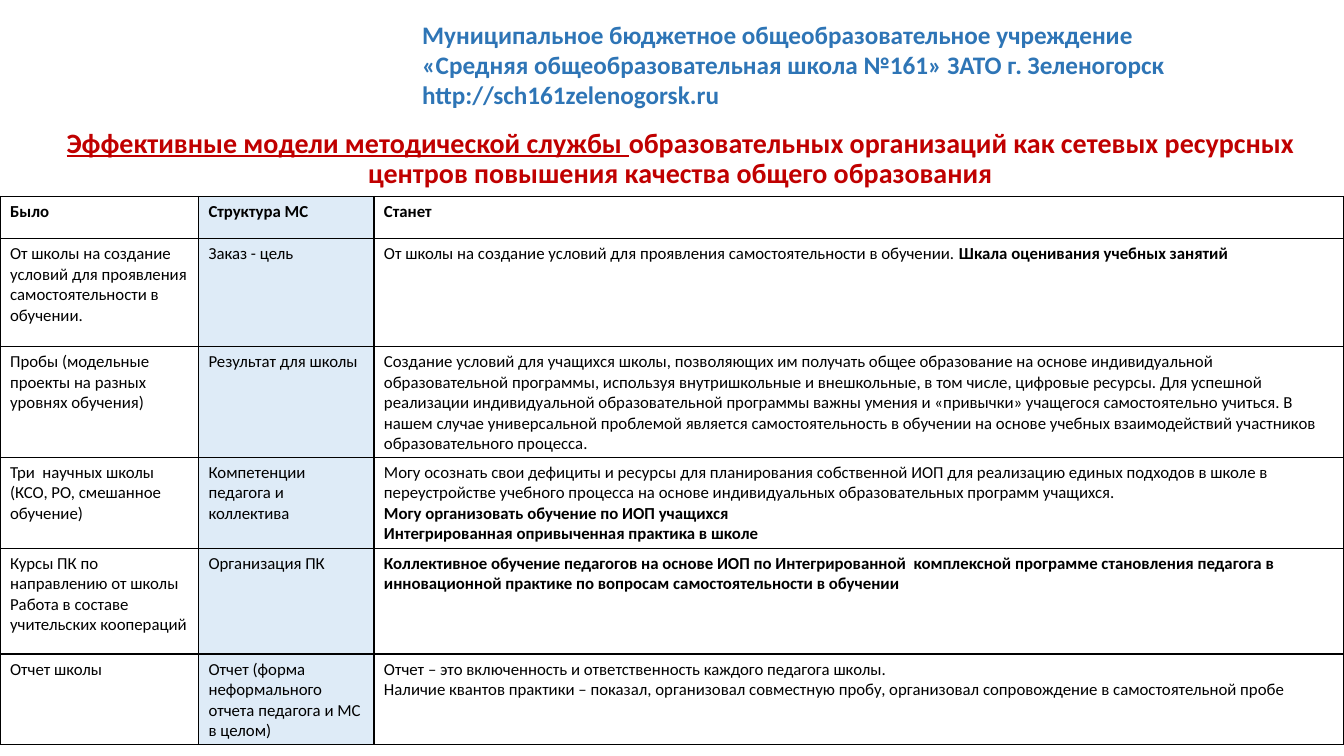
from dataclasses import dataclass

from lxml.etree import SubElement
from pptx import Presentation
from pptx.dml.color import RGBColor
from pptx.enum.text import MSO_ANCHOR, MSO_AUTO_SIZE, PP_ALIGN
from pptx.oxml.ns import qn
from pptx.util import Pt


@dataclass(frozen=True)
class Theme:
    face: str = "Calibri"
    blue: str = "2E75B6"
    red: str = "C00000"
    ink: str = "000000"
    pale: str = "DEEBF7"
    head: float = 18
    title: float = 20
    cell: float = 12
    edge: float = 1


@dataclass(frozen=True)
class Run:
    text: str
    bold: bool = False


Para = tuple[Run, ...]


@dataclass(frozen=True)
class Row:
    height: float
    was: tuple[Para, ...]
    topic: tuple[Para, ...]
    will: tuple[Para, ...]


THEME = Theme()


def lines(*texts: str, bold: bool = False) -> tuple[Para, ...]:
    return tuple((Run(text, bold),) for text in texts)


# Table content
WIDTHS = (141.8, 125.3, 692.7)
ROWS = (
    Row(30.2, lines("Было", bold=True), lines("Структура МС", bold=True), lines("Станет", bold=True)),
    Row(
        77,
        lines("От школы на создание условий для проявления самостоятельности в обучении."),
        lines("Заказ - цель"),
        ((Run("От школы на создание условий для проявления самостоятельности в обучении. "),
          Run("Шкала оценивания учебных занятий", True)),),
    ),
    Row(
        77,
        lines("Пробы (модельные проекты на разных уровнях обучения)"),
        lines("Результат для школы"),
        lines(
            "Создание условий для учащихся школы, позволяющих им получать общее образование "
            "на основе индивидуальной образовательной программы, используя внутришкольные и "
            "внешкольные, в том числе, цифровые ресурсы. Для успешной реализации индивидуальной "
            "образовательной программы важны умения и «привычки» учащегося самостоятельно "
            "учиться. В нашем случае универсальной проблемой является самостоятельность в "
            "обучении на основе учебных взаимодействий участников образовательного процесса."
        ),
    ),
    Row(
        63.4,
        lines("Три  научных школы (КСО, РО, смешанное обучение)"),
        lines("Компетенции педагога и коллектива"),
        lines(
            "Могу осознать свои дефициты и ресурсы для планирования собственной ИОП для "
            "реализацию единых подходов в школе в переустройстве учебного процесса на основе "
            "индивидуальных образовательных программ учащихся."
        ) + lines(
            "Могу организовать обучение по ИОП учащихся",
            "Интегрированная опривыченная практика в школе",
            bold=True,
        ),
    ),
    Row(
        75.6,
        lines("Курсы ПК по направлению от школы", "Работа в составе учительских коопераций"),
        lines("Организация ПК"),
        lines(
            "Коллективное обучение педагогов на основе ИОП по Интегрированной  комплексной "
            "программе становления педагога в инновационной практике по вопросам "
            "самостоятельности в обучении",
            bold=True,
        ),
    ),
    Row(
        61.2,
        lines("Отчет школы"),
        lines("Отчет (форма неформального отчета педагога и МС в целом)"),
        lines(
            "Отчет – это включенность и ответственность каждого педагога школы.",
            "Наличие квантов практики – показал, организовал совместную пробу, организовал "
            "сопровождение в самостоятельной пробе",
        ),
    ),
)


# Text and border helpers
def style(font, size: float, tint: str) -> None:
    font.name = THEME.face
    font.size = Pt(size)
    font.color.rgb = RGBColor.from_string(tint)


def write(frame, paras: tuple[Para, ...], size: float, tint: str) -> None:
    for index, runs in enumerate(paras):
        para = frame.add_paragraph() if index else frame.paragraphs[0]
        style(para.font, size, tint)
        same = len({run.bold for run in runs}) == 1
        if same:
            para.font.bold = runs[0].bold
        for item in runs:
            run = para.add_run()
            run.text = item.text
            if not same:
                run.font.bold = item.bold


def frame_cell(cell) -> None:
    props = cell._tc.get_or_add_tcPr()
    for side in ("a:lnL", "a:lnR", "a:lnT", "a:lnB"):
        line = SubElement(props, qn(side), w=str(Pt(THEME.edge)))
        fill = SubElement(line, qn("a:solidFill"))
        SubElement(fill, qn("a:srgbClr"), val=THEME.ink)


# School name
def add_head(slide) -> None:
    box = slide.shapes.add_textbox(Pt(294.5), Pt(10), Pt(598.3), Pt(72.7))
    frame = box.text_frame
    frame.word_wrap = True
    first, last = frame.paragraphs[0], frame.add_paragraph()
    first.text = (
        "Муниципальное бюджетное общеобразовательное учреждение \v"
        "«Средняя общеобразовательная школа №161» ЗАТО г. Зеленогорск"
    )
    last.text = "http://sch161zelenogorsk.ru"
    for para in (first, last):
        style(para.font, THEME.head, THEME.blue)
        para.font.bold = True


# Slide title
def add_title(slide) -> None:
    title = slide.shapes.title
    title.left, title.top, title.width, title.height = Pt(11.5), Pt(87), Pt(949), Pt(53.3)
    frame = title.text_frame
    frame.word_wrap = True
    frame.auto_size = MSO_AUTO_SIZE.NONE
    frame.vertical_anchor = MSO_ANCHOR.MIDDLE
    write(frame, ((
        Run("Эффективные модели методической службы ", True),
        Run("образовательных организаций как сетевых ресурсных центров "
            "повышения качества общего образования", True),
    ),), THEME.title, THEME.red)
    para = frame.paragraphs[0]
    para.alignment = PP_ALIGN.CENTER
    para.line_spacing = 0.9
    para.runs[0].font.underline = True


# Comparison table
def add_grid(slide) -> None:
    high = sum(row.height for row in ROWS)
    shape = slide.shapes.add_table(
        len(ROWS), len(WIDTHS), Pt(0), Pt(140.4), Pt(sum(WIDTHS)), Pt(high)
    )
    table = shape.table
    table.first_row = table.horz_banding = False
    for column, width in zip(table.columns, WIDTHS):
        column.width = Pt(width)
    for line, row in zip(table.rows, ROWS):
        line.height = Pt(row.height)
        for cell, paras in zip(line.cells, (row.was, row.topic, row.will)):
            write(cell.text_frame, paras, THEME.cell, THEME.ink)
            frame_cell(cell)
            if paras is row.topic:
                cell.fill.solid()
                cell.fill.fore_color.rgb = RGBColor.from_string(THEME.pale)
            else:
                cell.fill.background()


def main() -> None:
    deck = Presentation()
    deck.slide_width, deck.slide_height = Pt(960), Pt(540)
    slide = deck.slides.add_slide(deck.slide_layouts[5])
    add_head(slide)
    add_title(slide)
    add_grid(slide)
    deck.save("out.pptx")


if __name__ == "__main__":
    main()
